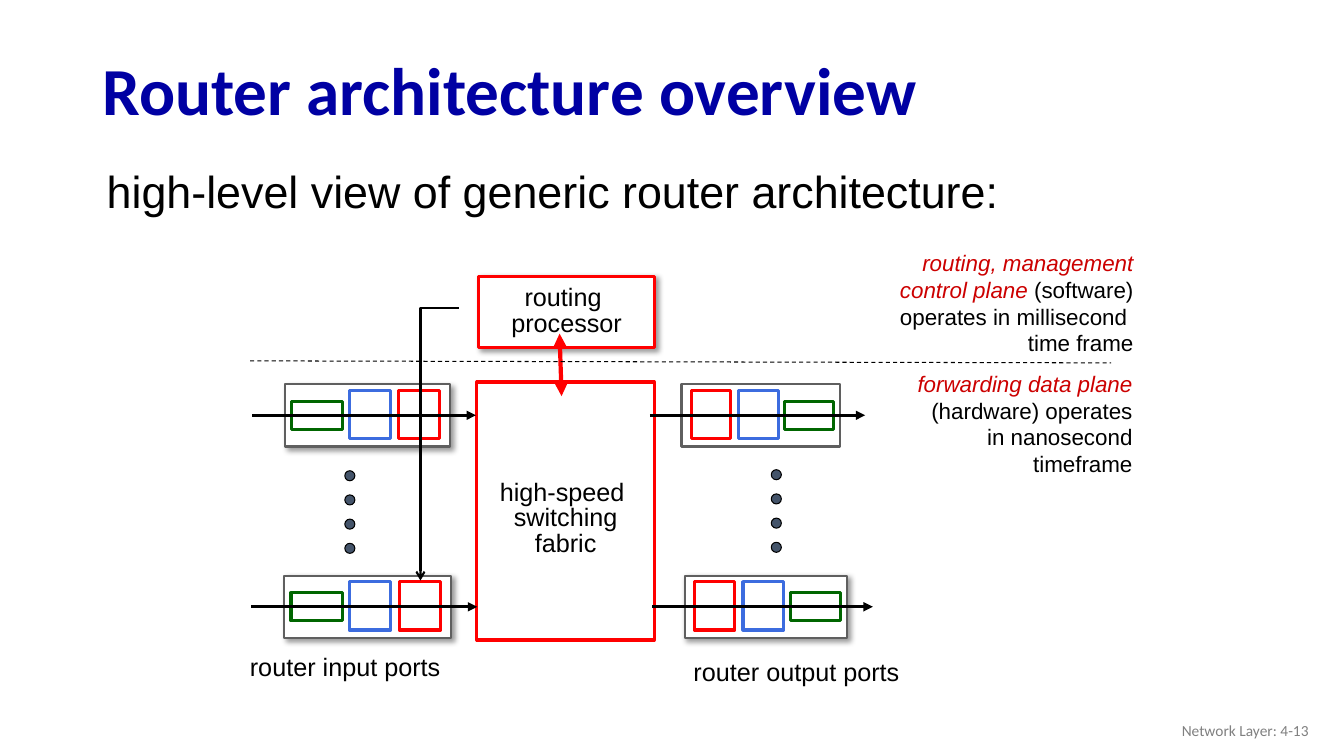
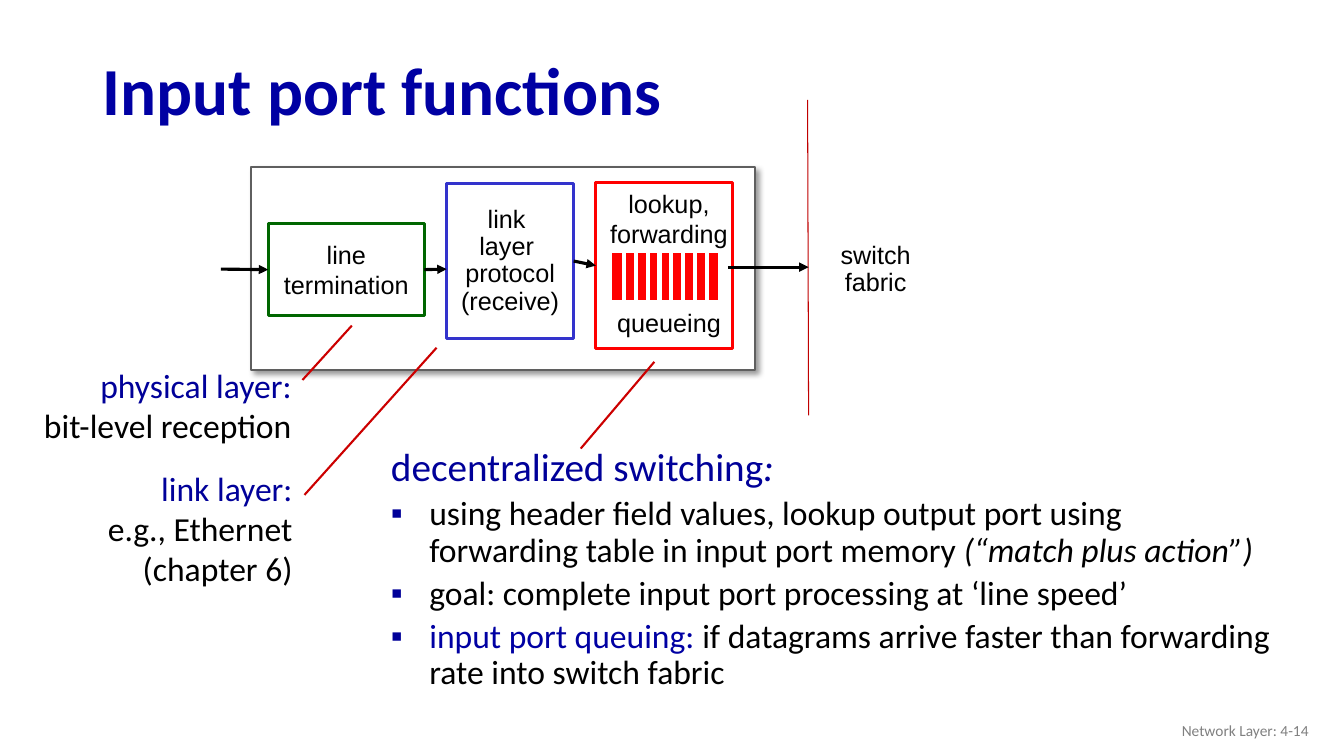
from lxml.etree import SubElement
from pptx import Presentation
from pptx.dml.color import RGBColor
from pptx.enum.dml import MSO_LINE
from pptx.enum.shapes import MSO_CONNECTOR, MSO_SHAPE
from pptx.enum.text import MSO_ANCHOR, PP_ALIGN
from pptx.oxml.ns import qn
from pptx.util import Inches, Pt

COLORS = {
    "title": "0000A3", "term": "000099", "text": "000000", "footer": "808080",
    "white": "FFFFFF", "red": "FF0000", "crimson": "CC0000", "divider": "C00000",
    "green": "006600", "blue": "3C6CDF", "link": "3333CC", "frame": "5F5F5F",
    "dot": "44546A",
}
LEFT, CENTER, RIGHT = PP_ALIGN.LEFT, PP_ALIGN.CENTER, PP_ALIGN.RIGHT


def rgb(name):
    return RGBColor.from_string(COLORS[name])


class Deck:
    def __init__(self):
        self.prs = Presentation()
        self.prs.slide_width = Inches(13.33)
        self.prs.slide_height = Inches(7.5)
        self.s = None

    def slide(self, title, number):
        self.s = self.prs.slides.add_slide(self.prs.slide_layouts[6])
        self.text((0.92, 0.44, 11.5, 0.98), [title], 48, "Calibri", "title",
                  spacing=0.9, anchor=MSO_ANCHOR.MIDDLE, wrap=True, bold=True)
        self.text((10.08, 7.05, 3, 0.4), [f"Network Layer: {number}"], 11, "Calibri",
                  "footer", RIGHT, anchor=MSO_ANCHOR.MIDDLE, wrap=True)

    def label(self, sp, paragraphs, size=18, font="Arial", color="text", align=LEFT,
              spacing=1.0, anchor=MSO_ANCHOR.TOP, wrap=False, bold=False):
        tf = sp.text_frame
        tf.word_wrap = wrap
        tf.vertical_anchor = anchor
        for i, runs in enumerate(paragraphs):
            p = tf.paragraphs[0] if i == 0 else tf.add_paragraph()
            p.alignment = align
            p.line_spacing = spacing
            for run in [(runs,)] if isinstance(runs, str) else runs:
                text, run_color, italic = run + (color, False)[len(run) - 1:]
                r = p.add_run()
                r.text = text
                r.font.name = font
                r.font.size = Pt(size)
                r.font.bold = bold
                r.font.italic = italic
                r.font.color.rgb = rgb(run_color)
        return tf

    def text(self, box, paragraphs, *style, **options):
        sp = self.s.shapes.add_textbox(*map(Inches, box))
        return self.label(sp, paragraphs, *style, **options)

    def shape(self, box, line=None, width=2.25, fill="white", shadow=False,
              kind=MSO_SHAPE.RECTANGLE):
        sp = self.s.shapes.add_shape(kind, *map(Inches, box))
        sp.fill.solid()
        sp.fill.fore_color.rgb = rgb(fill)
        if line:
            sp.line.color.rgb = rgb(line)
            sp.line.width = Pt(width)
        else:
            sp.line.fill.background()
        sp.shadow.inherit = False
        if shadow:
            effects = sp._element.spPr.find(qn("a:effectLst"))
            outer = SubElement(effects, qn("a:outerShdw"), blurRad=str(Pt(4)),
                               dist=str(Pt(3)), dir="2700000", algn="tl", rotWithShape="0")
            tint = SubElement(outer, qn("a:srgbClr"), val=COLORS["text"])
            SubElement(tint, qn("a:alpha"), val="40000")
        return sp

    def line(self, x1, y1, x2, y2, color="text", width=2.25, head=None, tail=None,
             dash=None, kind=MSO_CONNECTOR.STRAIGHT):
        c = self.s.shapes.add_connector(kind, *map(Inches, (x1, y1, x2, y2)))
        c.line.color.rgb = rgb(color)
        c.line.width = Pt(width)
        if dash:
            c.line.dash_style = dash
        spPr = c._element.spPr
        ln = spPr.find(qn("a:ln"))
        for tag, arrow in (("a:headEnd", head), ("a:tailEnd", tail)):
            if arrow:
                SubElement(ln, qn(tag), type=arrow)
        SubElement(spPr, qn("a:effectLst"))
        return c

    def arrow(self, x1, y1, x2, y2, begin=None, end=None):
        c = self.line(x1, y1, x2, y2, tail="triangle")
        if begin:
            c.begin_connect(begin, 3)
        if end:
            c.end_connect(end, 1)

    def control_path(self, left, top, width, height):
        c = self.line(left, top, left + width, top + height, width=1.5, tail="arrow",
                      kind=MSO_CONNECTOR.ELBOW)
        spPr = c._element.spPr
        spPr.find(qn("a:xfrm")).set("rot", "5400000")
        guides = spPr.find(qn("a:prstGeom")).find(qn("a:avLst"))
        SubElement(guides, qn("a:gd"), name="adj1", fmla="val -1")

    def port(self, left, top, width, output=False, shadow=True):
        self.shape((left, top, width, 0.62), "frame", 1.5, shadow=shadow)
        stages = (("green", 0.04, 0.31, 0.17, 0.28), ("blue", 0.39, 0.25, 0.06, 0.48),
                  ("red", 0.69, 0.25, 0.06, 0.48))
        for color, start, share, drop, height in stages:
            if output:
                start = 1 - start - share
            self.shape((left + start * width, top + drop, share * width, height), color)
        self.arrow(left - 0.2 * width, top + 0.31, left + 1.16 * width, top + 0.31)

    def dots(self, left, top):
        for i in range(4):
            self.shape((left, top + 0.24 * i, 0.1, 0.1), "text", 0.75, "dot",
                       kind=MSO_SHAPE.OVAL)

    def bullet(self, p):
        pPr = p._p.get_or_add_pPr()
        color = SubElement(pPr, qn("a:buClr"))
        SubElement(color, qn("a:srgbClr"), val=COLORS["term"])
        SubElement(pPr, qn("a:buFont"), typeface="Arial")
        SubElement(pPr, qn("a:buChar"), char="▪")

    def bullets(self, box, heading, items):
        tf = self.text(box, [heading, *items], 24, "Calibri", spacing=0.9, wrap=True)
        for p in tf.paragraphs:
            p.space_before = Pt(5)
            pPr = p._p.get_or_add_pPr()
            pPr.set("marL", str(Inches(0.38)))
            pPr.set("indent", str(-Inches(0.38)))
        for r in tf.paragraphs[0].runs:
            r.font.size = Pt(28)
        for p in tf.paragraphs[1:]:
            self.bullet(p)


def router_overview(d):
    d.slide("Router architecture overview", "4-13")
    d.text((0.96, 1.58, 11.8, 0.64), ["high-level view of generic router architecture:"],
           32, wrap=True)
    d.shape((4.73, 3.79, 1.76, 2.56), "red")
    d.text((4.85, 4.72, 1.52, 0.87), ["high-speed ", "switching", "fabric"],
           align=CENTER, spacing=0.85)
    processor = d.shape((4.75, 2.74, 1.74, 0.71), "red", shadow=True)
    d.label(processor, ["routing ", "processor"], align=CENTER, spacing=0.85,
            anchor=MSO_ANCHOR.MIDDLE)
    d.line(5.55, 3.31, 5.57, 3.93, "red", 3, head="triangle", tail="triangle")

    d.port(2.83, 3.81, 1.63)
    d.port(2.82, 5.71, 1.65)
    d.port(6.76, 3.81, 1.57, output=True, shadow=False)
    d.port(6.79, 5.71, 1.61, output=True)
    d.dots(3.42, 4.67)
    d.dots(7.65, 4.66)
    d.text((2.38, 6.41, 2.09, 0.4), ["router input ports"])
    d.text((6.78, 6.46, 2.24, 0.4), ["router output ports"])

    d.line(2.48, 3.58, 11.02, 3.6, width=0.75, dash=MSO_LINE.DASH)
    d.text((8.94, 3.62, 2.39, 1.18),
           [[("forwarding data plane ", "crimson", True),
             ("(hardware) operates in nanosecond timeframe",)]],
           16, align=RIGHT, wrap=True)
    d.text((8.19, 2.42, 3.15, 1.18),
           [[("routing, management", "crimson", True)],
            [("control plane ", "crimson", True), ("(software)",)],
            "operates in millisecond ", "time frame"],
           16, align=RIGHT, wrap=True)
    d.control_path(3.01, 4.22, 2.7, 0.38)


def input_port(d):
    d.slide("Input port functions", "4-14")
    middle = {"align": CENTER, "anchor": MSO_ANCHOR.MIDDLE}
    d.shape((2.49, 1.66, 5, 2.01), "frame", 1.5, shadow=True)
    d.line(8.01, 0.99, 8.02, 4.12, "divider", 0.75)
    fabric = d.shape((8.11, 2.22, 1.15, 0.91))
    d.label(fabric, ["switch", "fabric"], spacing=0.9, **middle)

    termination = d.shape((2.66, 2.22, 1.55, 0.91), "green")
    d.label(termination, ["line", "termination"], **middle)
    link = d.shape((4.43, 1.82, 1.26, 1.54), "link")
    d.label(link, ["link ", "layer ", "protocol", "(receive)"], spacing=0.9, **middle)
    lookup = d.shape((5.91, 1.81, 1.36, 1.65), "red")
    tf = d.text((5.95, 1.82, 1.37, 1.6), ["lookup,", "forwarding", "queueing"], align=CENTER)
    tf.paragraphs[2].space_before = Pt(42)

    d.shape((6.05, 2.49, 1.09, 0.51), "white", 3, "red")
    for i in range(8):
        x = 6.19 + 0.82 * i / 7
        d.line(x, 2.5, x, 2.99, "white", 3)

    d.arrow(2.19, 2.67, 2.66, 2.67, end=termination)
    d.arrow(4.21, 2.67, 4.43, 2.67, begin=termination)
    d.arrow(5.69, 2.6, 5.91, 2.6, begin=link, end=lookup)
    d.arrow(7.22, 2.65, 8.02, 2.65)

    d.text((0.28, 3.57, 2.71, 0.91), [[("physical layer:", "term")], "bit-level reception"],
           24, "Calibri", align=RIGHT)
    d.text((0.95, 4.59, 2.05, 1.31),
           [[("link layer:", "term")], "e.g., Ethernet", "(chapter 6)"],
           24, "Calibri", align=RIGHT)
    d.bullets((3.78, 4.39, 8.96, 2.92),
              [("decentralized switching", "term"), (":", "term", True)],
              [[("using header field values, lookup output port using forwarding table "
                 "in input port memory ",), ("(“match plus action”)", "text", True)],
               "goal: complete input port processing at ‘line speed’",
               [("input port queuing: ", "title"),
                ("if datagrams arrive faster than forwarding rate into switch fabric",)]])
    for leader in ((3, 3.77, 3.49, 3.23), (3.02, 4.91, 4.33, 3.45), (5.76, 4.45, 6.49, 3.59)):
        d.line(*leader, "crimson", 1.5)


def main():
    d = Deck()
    router_overview(d)
    input_port(d)
    d.prs.save("out.pptx")


if __name__ == "__main__":
    main()
